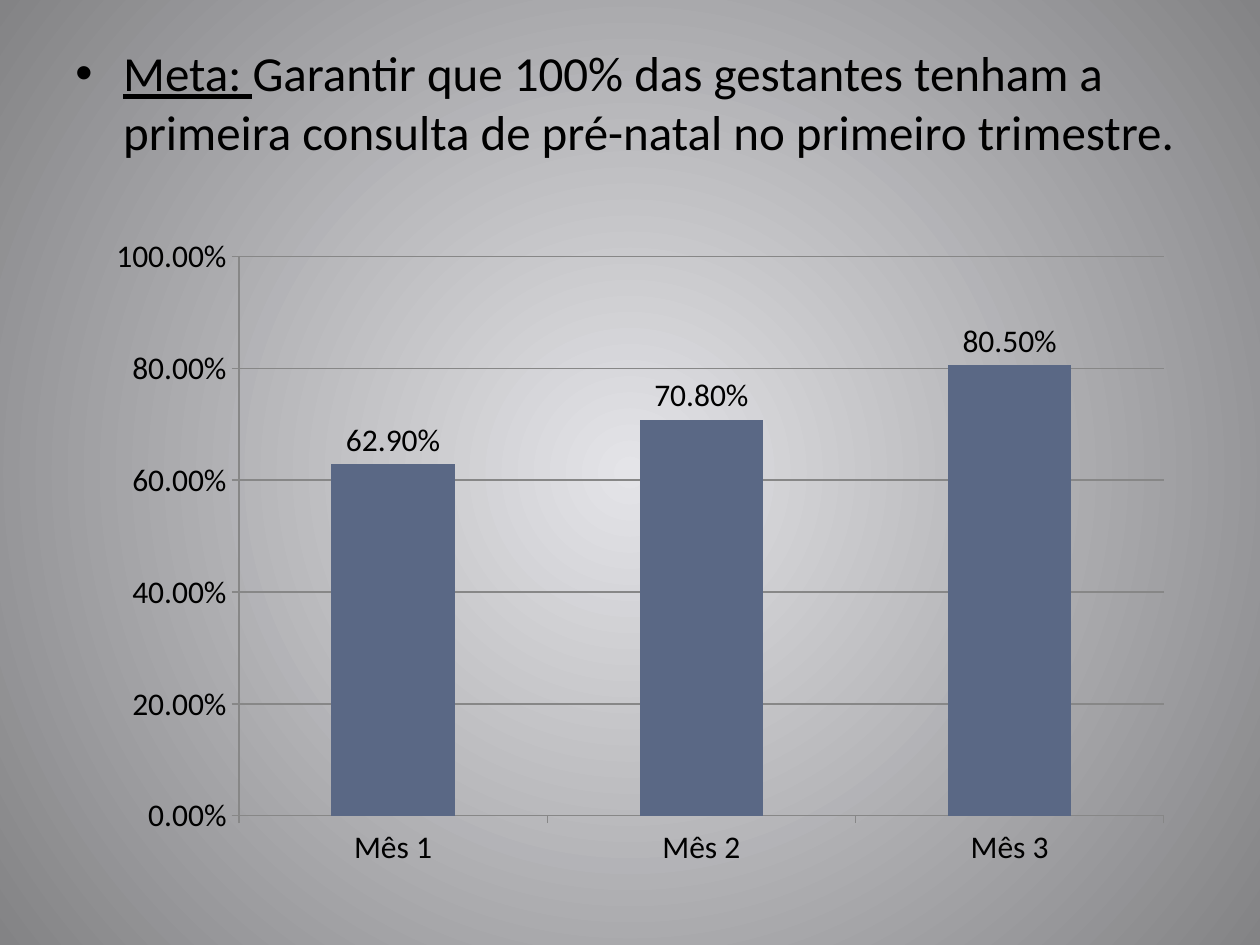
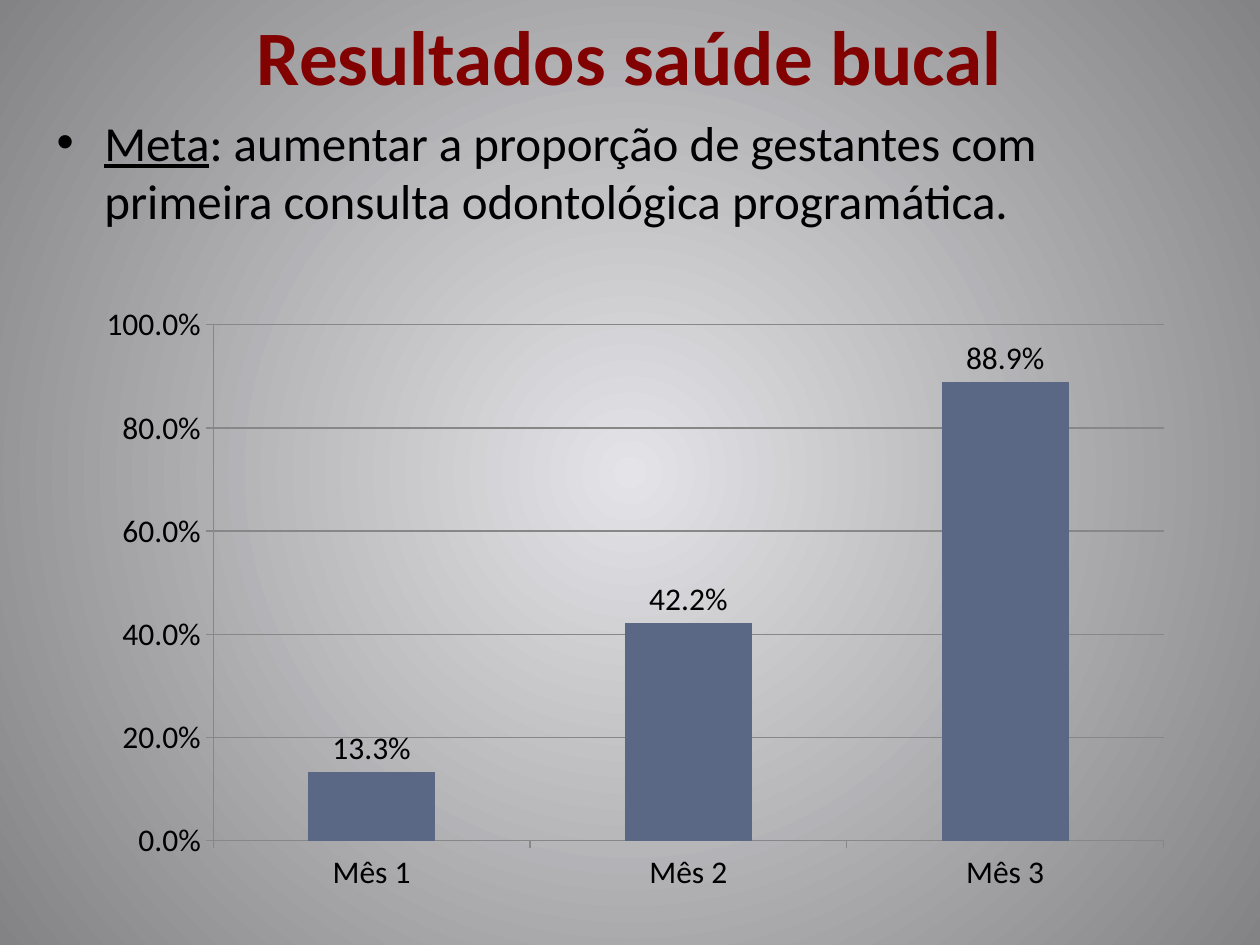
from dataclasses import dataclass

from lxml.etree import SubElement
from pptx import Presentation
from pptx.chart.data import CategoryChartData
from pptx.dml.color import RGBColor
from pptx.enum.chart import XL_CHART_TYPE as ChartType
from pptx.enum.chart import XL_LABEL_POSITION as LabelPosition
from pptx.enum.chart import XL_TICK_MARK as TickMark
from pptx.enum.text import MSO_ANCHOR as Anchor
from pptx.enum.text import PP_ALIGN as Align
from pptx.oxml.ns import qn
from pptx.slide import Slide
from pptx.text.text import TextFrame, _Paragraph as Paragraph
from pptx.util import Inches, Pt

FONT = "Calibri"
BLACK = RGBColor(0x00, 0x00, 0x00)
DARK_RED = RGBColor(0x82, 0x01, 0x01)
SLATE_BLUE = RGBColor(0x5A, 0x68, 0x85)
AXIS_GRAY = RGBColor(0x87, 0x87, 0x87)
CENTER_GRAY = RGBColor(0xE4, 0xE4, 0xE8)
EDGE_GRAY = RGBColor(0x83, 0x83, 0x85)
MONTHS = ("Mês 1", "Mês 2", "Mês 3")
BULLET_INDENT = Inches(0.38)


@dataclass(frozen=True)
class Frame:
    left: float
    top: float
    width: float
    height: float

    def lengths(self) -> tuple[Inches, ...]:
        return tuple(map(Inches, (self.left, self.top, self.width, self.height)))


@dataclass(frozen=True)
class GoalPage:
    goal_label: str
    goal: str
    goal_frame: Frame
    rates: tuple[float, ...]
    rate_format: str
    chart_frame: Frame
    title: str = ""


GOAL_PAGES = (
    GoalPage(
        "Meta: ",
        "Garantir que 100% das gestantes tenham a primeira consulta "
        "de pré-natal no primeiro trimestre.",
        Frame(0.5, 0.29, 9, 5.55),
        (0.629, 0.708, 0.805),
        "0.00%",
        Frame(0.75, 1.78, 8.66, 5.2),
    ),
    GoalPage(
        "Meta",
        ": aumentar a proporção de gestantes com primeira consulta "
        "odontológica programática.",
        Frame(0.35, 0.84, 9.22, 4.95),
        (0.133, 0.422, 0.889),
        "0.0%",
        Frame(0.67, 2.33, 8.74, 4.84),
        title="Resultados saúde bucal",
    ),
)
TITLE_FRAME = Frame(0.5, -0.19, 9, 1.25)


def paint_background(page: Slide) -> None:
    """Fill the page with a gradient that spreads in circles from its middle."""
    fill = page.background.fill
    fill.gradient()
    for stop, color in zip(fill.gradient_stops, (CENTER_GRAY, EDGE_GRAY)):
        stop.color.rgb = color
    gradient = next(page.element.iter(qn("a:gradFill")))
    gradient.remove(gradient.find(qn("a:lin")))
    circle = SubElement(gradient, qn("a:path"))
    circle.set("path", "circle")
    middle = SubElement(circle, qn("a:fillToRect"))
    for side in "ltrb":
        middle.set(side, "50000")


def add_text_frame(page: Slide, frame: Frame) -> TextFrame:
    text_frame = page.shapes.add_textbox(*frame.lengths()).text_frame
    text_frame.word_wrap = True
    return text_frame


def add_span(para: Paragraph, text: str, size: int, color: RGBColor = BLACK,
             bold: bool = False, underline: bool = False) -> None:
    span = para.add_run()
    span.text = text
    span.font.name = FONT
    span.font.size = Pt(size)
    span.font.color.rgb = color
    span.font.bold = bold
    span.font.underline = underline


def add_title(page: Slide, title: str) -> None:
    text_frame = add_text_frame(page, TITLE_FRAME)
    text_frame.vertical_anchor = Anchor.MIDDLE
    para = text_frame.paragraphs[0]
    para.alignment = Align.CENTER
    add_span(para, title, 44, DARK_RED, bold=True)


def add_goal(page: Slide, content: GoalPage) -> None:
    para = add_text_frame(page, content.goal_frame).paragraphs[0]
    para.space_before = Pt(5.6)
    properties = para._p.get_or_add_pPr()
    properties.set("marL", str(BULLET_INDENT))
    properties.set("indent", str(-BULLET_INDENT))
    SubElement(properties, qn("a:buFont")).set("typeface", "Arial")
    SubElement(properties, qn("a:buChar")).set("char", "•")
    add_span(para, content.goal_label, 28, underline=True)
    add_span(para, content.goal, 28)


def add_rate_chart(page: Slide, content: GoalPage) -> None:
    data = CategoryChartData(number_format=content.rate_format)
    data.categories = MONTHS
    data.add_series("Series 1", content.rates)
    chart = page.shapes.add_chart(
        ChartType.COLUMN_CLUSTERED, *content.chart_frame.lengths(), data
    ).chart
    chart.has_legend = False
    chart.has_title = False
    chart.font.name = FONT
    chart.font.size = Pt(18)
    chart.font.color.rgb = BLACK

    rate_axis = chart.value_axis
    rate_axis.minimum_scale = 0
    rate_axis.maximum_scale = 1
    rate_axis.major_unit = 0.2
    rate_axis.has_major_gridlines = True
    rate_axis.tick_labels.number_format = content.rate_format
    rate_axis.tick_labels.number_format_is_linked = False
    for axis in (chart.category_axis, rate_axis):
        axis.major_tick_mark = TickMark.OUTSIDE
    for ruled in (chart.category_axis, rate_axis, rate_axis.major_gridlines):
        ruled.format.line.color.rgb = AXIS_GRAY
        ruled.format.line.width = Pt(0.75)

    plot = chart.plots[0]
    plot.gap_width = 150
    plot.vary_by_categories = False
    bars = plot.series[0]
    bars.format.fill.solid()
    bars.format.fill.fore_color.rgb = SLATE_BLUE
    labels = bars.data_labels
    labels.show_value = True
    labels.position = LabelPosition.OUTSIDE_END
    labels.number_format = content.rate_format
    labels.number_format_is_linked = False


def main() -> None:
    deck = Presentation()
    deck.slide_width = Inches(10)
    deck.slide_height = Inches(7.5)
    for content in GOAL_PAGES:
        page = deck.slides.add_slide(deck.slide_layouts[6])
        paint_background(page)
        if content.title:
            add_title(page, content.title)
        add_goal(page, content)
        add_rate_chart(page, content)
    deck.save("out.pptx")


if __name__ == "__main__":
    main()
